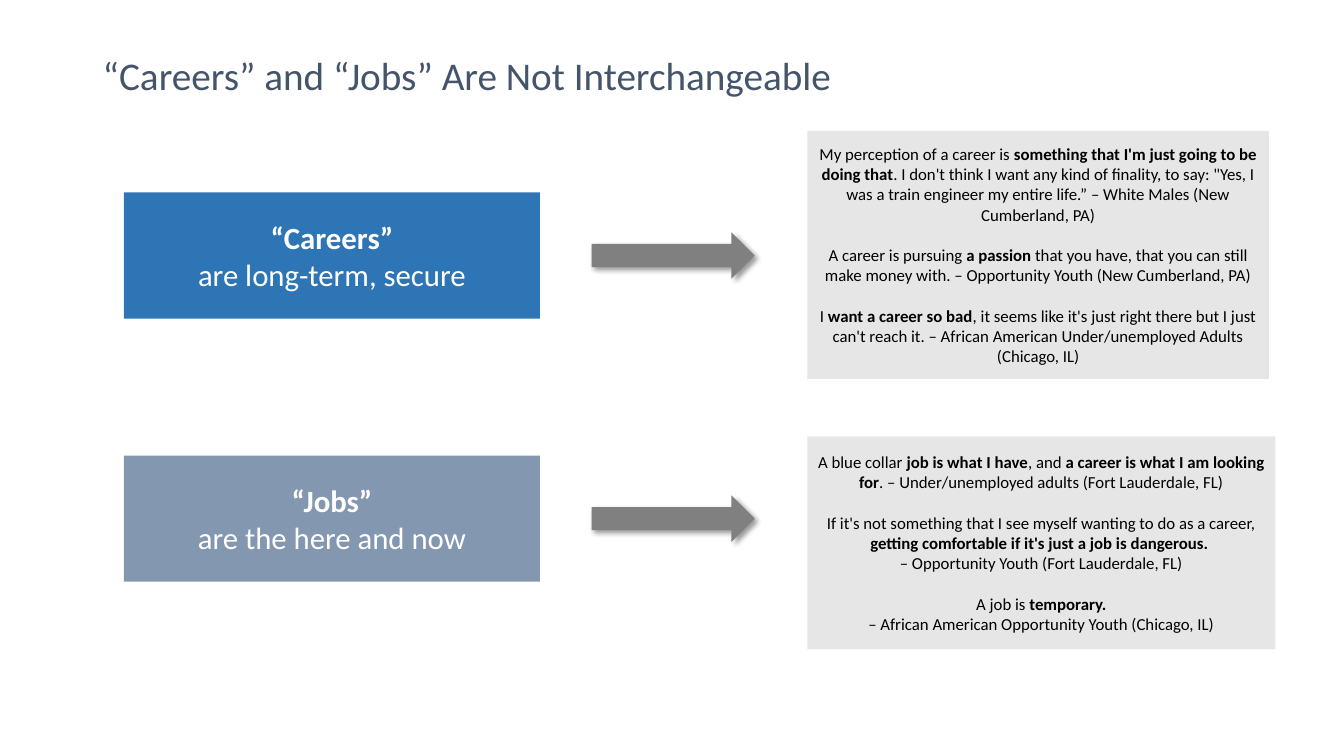
from lxml.etree import SubElement
from pptx import Presentation
from pptx.dml.color import RGBColor
from pptx.enum.shapes import MSO_SHAPE
from pptx.enum.text import MSO_ANCHOR, PP_ALIGN
from pptx.oxml.ns import qn
from pptx.util import Cm, Pt

HUES = {
    "title": "44546A",
    "career": "2E75B6",
    "job": "8497B0",
    "quote": "E7E6E6",
    "arrow": "808080",
    "white": "FFFFFF",
    "black": "000000",
}

# Asterisks enclose bold words; a line break starts a paragraph
CAREERS = [
    "My perception of a career is *something that I'm just going to be doing that*. "
    "I don't think I want any kind of finality, to say: \"Yes, I was a train engineer "
    "my entire life.” – White Males (New Cumberland, PA)",
    "A career is pursuing *a passion *that you have, that you can still make money "
    "with. – Opportunity Youth (New Cumberland, PA)",
    "I *want a career so bad*, it seems like it's just right there but I just can't "
    "reach it. – African American Under/unemployed Adults (Chicago, IL)",
]
JOBS = [
    "A blue collar *job is what I have*, and *a career is what I am looking for*. "
    "– Under/unemployed adults (Fort Lauderdale, FL)",
    "If it's not something that I see myself wanting to do as a career, "
    "*getting comfortable if it's just a job is dangerous. *\n"
    "– Opportunity Youth (Fort Lauderdale, FL)",
    "A job is *temporary.*\n– African American Opportunity Youth (Chicago, IL)",
]


def hue(name):
    return RGBColor.from_string(HUES[name])


def write(shape, blocks, size, color, align=PP_ALIGN.CENTER, gap=0, lead=None):
    """Fill a shape with blocks of text, set apart by a gap in points."""
    frame = shape.text_frame
    frame.word_wrap = True
    frame.vertical_anchor = MSO_ANCHOR.MIDDLE
    para = None
    for block in blocks:
        for row, line in enumerate(block.split("\n")):
            first = para is None
            para = frame.paragraphs[0] if first else frame.add_paragraph()
            para.alignment = align
            para.line_spacing = lead
            para.space_before = Pt(gap if row == 0 and not first else 0)
            for part, words in enumerate(line.split("*")):
                if not words:
                    continue
                run = para.add_run()
                run.text = words
                run.font.name = "Calibri"
                run.font.size = Pt(size)
                run.font.bold = part % 2 == 1
                run.font.color.rgb = hue(color)


def draw(slide, kind, box, fill):
    shape = slide.shapes.add_shape(kind, *map(Cm, box))
    shape.shadow.inherit = False
    shape.fill.solid()
    shape.fill.fore_color.rgb = hue(fill)
    shape.line.fill.background()
    return shape


def shade(shape):
    """Cast a soft shadow to the lower right."""
    effects = shape.element.spPr.find(qn("a:effectLst"))
    outer = SubElement(effects, qn("a:outerShdw"), blurRad=str(Pt(4)),
                       dist=str(Pt(3)), dir=str(45 * 60000),
                       algn="tl", rotWithShape="0")
    color = SubElement(outer, qn("a:srgbClr"), val=HUES["black"])
    SubElement(color, qn("a:alpha"), val="40000")


def add_title(slide, box):
    title = slide.shapes.add_textbox(*map(Cm, box))
    write(title, ["“Careers” and “Jobs” Are Not Interchangeable"], 28, "title",
          align=PP_ALIGN.LEFT, lead=0.9)


def add_row(slide, box, fill, label, quotes, panel):
    """Card in the given box, arrow level with its middle, quotes in the panel."""
    left, top, width, height = box
    card = draw(slide, MSO_SHAPE.RECTANGLE, box, fill)
    write(card, [label], 22, "white")

    # Arrow
    thick = 1.17
    spot = (left + width + 1.3, top + (height - thick) / 2, 4.11, thick)
    shade(draw(slide, MSO_SHAPE.RIGHT_ARROW, spot, "arrow"))

    # Quotes
    note = draw(slide, MSO_SHAPE.RECTANGLE, panel, "quote")
    write(note, quotes, 12, "black", gap=14.6)


def main():
    deck = Presentation()
    deck.slide_width, deck.slide_height = Cm(33.87), Cm(19.05)
    slide = deck.slides.add_slide(deck.slide_layouts[6])
    add_title(slide, (2.34, 1.02, 29.21, 1.9))
    add_row(slide, (3.12, 4.85, 10.49, 3.18), "career",
            "*“Careers”*\nare long-term, secure", CAREERS,
            (20.35, 3.3, 11.63, 6.25))
    add_row(slide, (3.12, 11.48, 10.49, 3.18), "job",
            "*“Jobs”*\nare the here and now", JOBS,
            (20.35, 11, 11.79, 5.36))
    deck.save("out.pptx")


if __name__ == "__main__":
    main()
